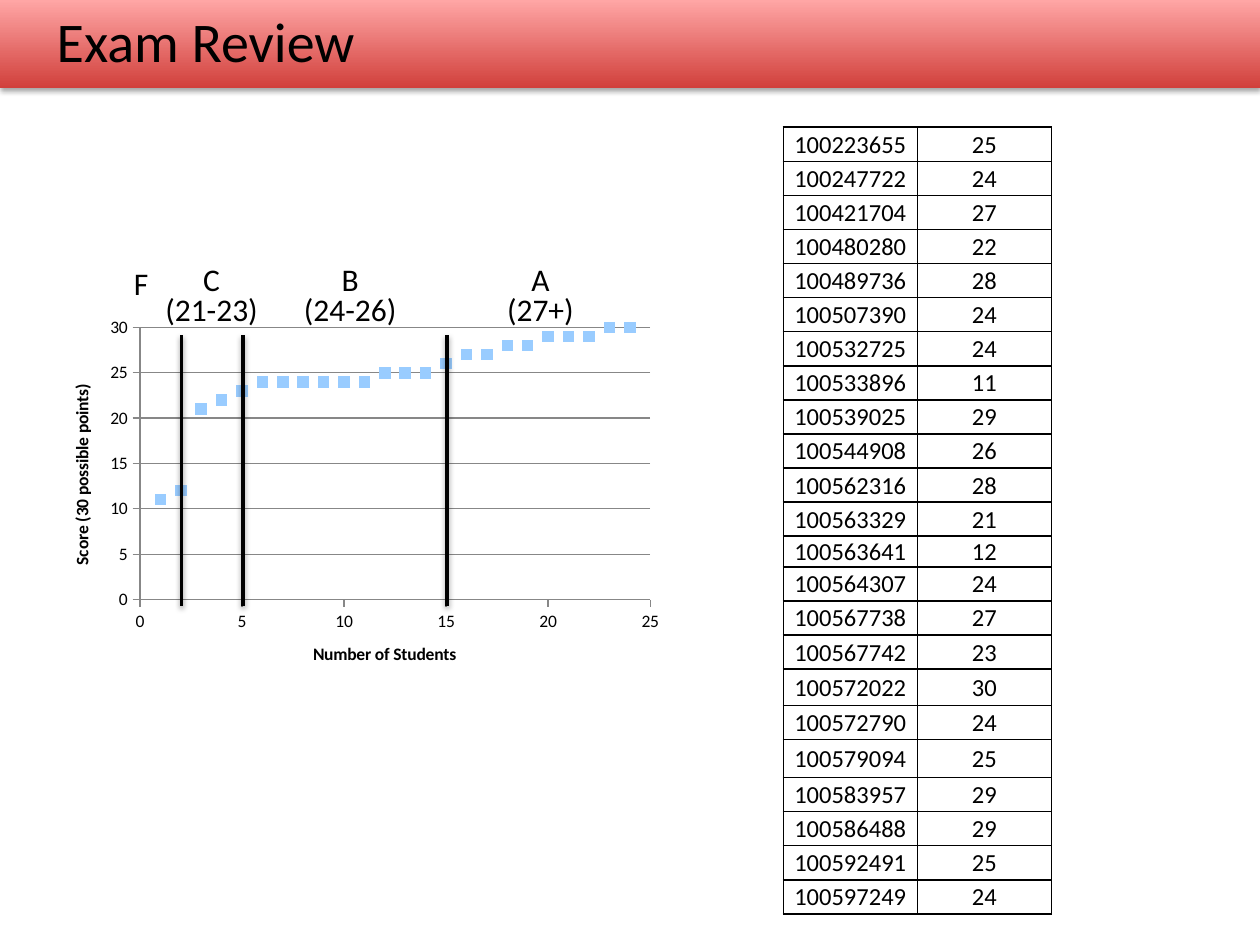
import lxml.etree
import pptx
import pptx.chart.data
import pptx.dml.color
import pptx.enum.chart
import pptx.enum.shapes
import pptx.enum.text
import pptx.oxml
import pptx.oxml.ns
import pptx.util

Pt = pptx.util.Pt
qn = pptx.oxml.ns.qn
ALIGN = pptx.enum.text.PP_ALIGN
ANCHOR = pptx.enum.text.MSO_ANCHOR
COLORS = {"text": "000000", "line": "000000", "grid": "878787", "marker": "99CCFF",
          "band_low": "D1403C", "band_high": "FFA6A5"}
FONT = "Calibri"
RESULTS = [
    (100223655, 25), (100247722, 24), (100421704, 27), (100480280, 22), (100489736, 28),
    (100507390, 24), (100532725, 24), (100533896, 11), (100539025, 29), (100544908, 26),
    (100562316, 28), (100563329, 21), (100563641, 12), (100564307, 24), (100567738, 27),
    (100567742, 23), (100572022, 30), (100572790, 24), (100579094, 25), (100583957, 29),
    (100586488, 29), (100592491, 25), (100597249, 24),
]
SCORES = [11, 12, 21, 22, 23] + [24] * 6 + [25] * 3 + [26, 27, 27, 28, 28, 29, 29, 29, 30, 30]
ROW_HEIGHT = 19.5
SPECIAL_HEIGHTS = {12: 17.3, 16: 20.9, 18: 21.6}
PLOT = {"x": 0.15, "y": 0.04, "w": 0.81, "h": 0.72}
MAX_STUDENTS = 25
GRADE_LIMITS = [2, 5, 15]
GRADE_LABELS = [
    ("F", (69.1, 151.2, 23, 25.2)),
    ("C\n(21-23)", (87.1, 149, 67.7, 43.2)),
    ("B\n(24-26)", (166.3, 149, 67.7, 43.2)),
    ("A\n(27+)", (282.2, 149, 53.3, 43.2)),
]


def rgb(name):
    return pptx.dml.color.RGBColor.from_string(COLORS[name])


def format_font(font, size, bold=False):
    font.name = FONT
    font.size = Pt(size)
    font.bold = bold
    font.color.rgb = rgb("text")


def write_text(frame, text, size=18, align=ALIGN.CENTER, spacing=None, bold=False):
    for index, line in enumerate(text.split("\n")):
        para = frame.add_paragraph() if index else frame.paragraphs[0]
        para.alignment = align
        para.line_spacing = spacing
        span = para.add_run()
        span.text = line
        format_font(span.font, size, bold)


def set_shadow(shape, alpha, blur, distance):
    properties = shape._element.spPr
    effects = lxml.etree.SubElement(properties, qn("a:effectLst"))
    shadow = lxml.etree.SubElement(
        effects, qn("a:outerShdw"), blurRad=str(Pt(blur)), dist=str(Pt(distance)),
        dir="5400000", rotWithShape="0")
    color = lxml.etree.SubElement(shadow, qn("a:srgbClr"), val=COLORS["line"])
    lxml.etree.SubElement(color, qn("a:alpha"), val=str(alpha * 1000))


def add_header(page, box):
    band = page.shapes.add_shape(
        pptx.enum.shapes.MSO_SHAPE.RECTANGLE, *[Pt(value) for value in box])
    band.fill.gradient()
    band.fill.gradient_angle = 90
    for stop, name, position in zip(band.fill.gradient_stops, ("band_low", "band_high"), (0, 1)):
        stop.color.rgb = rgb(name)
        stop.position = position
    band.line.fill.background()
    set_shadow(band, 35, 3.1, 1.8)
    title = page.shapes.title
    title._element.addprevious(band._element)
    left, top, width, height = box
    title.left, title.top = Pt(left + 25.2), Pt(top)
    title.width, title.height = Pt(188), Pt(46)
    frame = title.text_frame
    frame.auto_size = pptx.enum.text.MSO_AUTO_SIZE.NONE
    frame.word_wrap = False
    frame.vertical_anchor = ANCHOR.TOP
    write_text(frame, "Exam Review", size=32, align=ALIGN.LEFT)


def format_axis(axis, title, maximum, grid):
    axis.minimum_scale = 0
    axis.maximum_scale = maximum
    axis.major_unit = 5
    axis.has_major_gridlines = grid
    axis.major_tick_mark = pptx.enum.chart.XL_TICK_MARK.OUTSIDE
    axis.format.line.color.rgb = rgb("grid")
    if grid:
        axis.major_gridlines.format.line.color.rgb = rgb("grid")
    format_font(axis.tick_labels.font, 10)
    write_text(axis.axis_title.text_frame, title, size=10, bold=True)


def set_plot_layout(chart):
    area = chart._chartSpace.chart.plotArea
    for old in area.findall(qn("c:layout")):
        area.remove(old)
    layout = lxml.etree.Element(qn("c:layout"))
    manual = lxml.etree.SubElement(layout, qn("c:manualLayout"))
    settings = {"layoutTarget": "inner", "xMode": "edge", "yMode": "edge", **PLOT}
    for name, value in settings.items():
        lxml.etree.SubElement(manual, qn("c:" + name), val=str(value))
    area.insert(0, layout)


def add_score_chart(page, box):
    data = pptx.chart.data.XyChartData()
    points = data.add_series("Series 1")
    for student, score in enumerate(SCORES, 1):
        points.add_data_point(student, score)
    chart = page.shapes.add_chart(
        pptx.enum.chart.XL_CHART_TYPE.XY_SCATTER, *[Pt(value) for value in box], data).chart
    chart.has_legend = False
    chart.has_title = False
    format_font(chart.font, 10)
    chart.plots[0].vary_by_categories = False
    format_axis(chart.category_axis, "Number of Students", MAX_STUDENTS, False)
    format_axis(chart.value_axis, "Score (30 possible points)", 30, True)
    series = chart.plots[0].series[0]
    series.smooth = False
    series.format.line.fill.background()
    series.marker.style = pptx.enum.chart.XL_MARKER_STYLE.SQUARE
    series.marker.size = 6
    series.marker.format.fill.solid()
    series.marker.format.fill.fore_color.rgb = rgb("marker")
    series.marker.format.line.fill.background()
    set_plot_layout(chart)


def add_grade_limits(page, box):
    left, top, width, height = box
    for students in GRADE_LIMITS:
        x = left + width * (PLOT["x"] + PLOT["w"] * students / MAX_STUDENTS) + 0.5
        limit = page.shapes.add_connector(
            pptx.enum.shapes.MSO_CONNECTOR.STRAIGHT, Pt(x), Pt(top + 13), Pt(x), Pt(top + 167.8))
        limit.line.color.rgb = rgb("line")
        limit.line.width = Pt(2)
        set_shadow(limit, 38, 3.1, 1.6)


def add_grade_labels(page):
    for text, box in GRADE_LABELS:
        frame = page.shapes.add_textbox(*[Pt(value) for value in box]).text_frame
        frame.word_wrap = False
        write_text(frame, text, spacing=0.8)


def set_borders(cell):
    properties = cell._tc.get_or_add_tcPr()
    for index, side in enumerate(("lnL", "lnR", "lnT", "lnB")):
        border = lxml.etree.Element(qn("a:" + side), w=str(Pt(1)))
        fill = lxml.etree.SubElement(border, qn("a:solidFill"))
        lxml.etree.SubElement(fill, qn("a:srgbClr"), val=COLORS["line"])
        properties.insert(index, border)


def add_results_table(page, box):
    table = page.shapes.add_table(len(RESULTS), 2, *[Pt(value) for value in box]).table
    table.first_row = False
    table.horz_banding = False
    for column in table.columns:
        column.width = Pt(box[2] / 2)
    for index, result in enumerate(RESULTS):
        table.rows[index].height = Pt(SPECIAL_HEIGHTS.get(index, ROW_HEIGHT))
        for column, value in enumerate(result):
            cell = table.cell(index, column)
            cell.fill.background()
            cell.vertical_anchor = ANCHOR.MIDDLE
            cell.margin_left = cell.margin_right = cell.margin_top = Pt(0.7)
            cell.margin_bottom = Pt(0)
            write_text(cell.text_frame, str(value), size=14)
            set_borders(cell)


def main():
    deck = pptx.Presentation()
    deck.slide_width, deck.slide_height = Pt(720), Pt(540)
    page = deck.slides.add_slide(deck.slide_layouts[5])
    chart_box = (26, 178.5, 360, 216)
    add_header(page, (0, 0, 720, 50.4))
    add_score_chart(page, chart_box)
    add_grade_limits(page, chart_box)
    add_grade_labels(page)
    add_results_table(page, (447.6, 72.7, 153.2, 450))
    deck.save("out.pptx")


if __name__ == "__main__":
    main()
